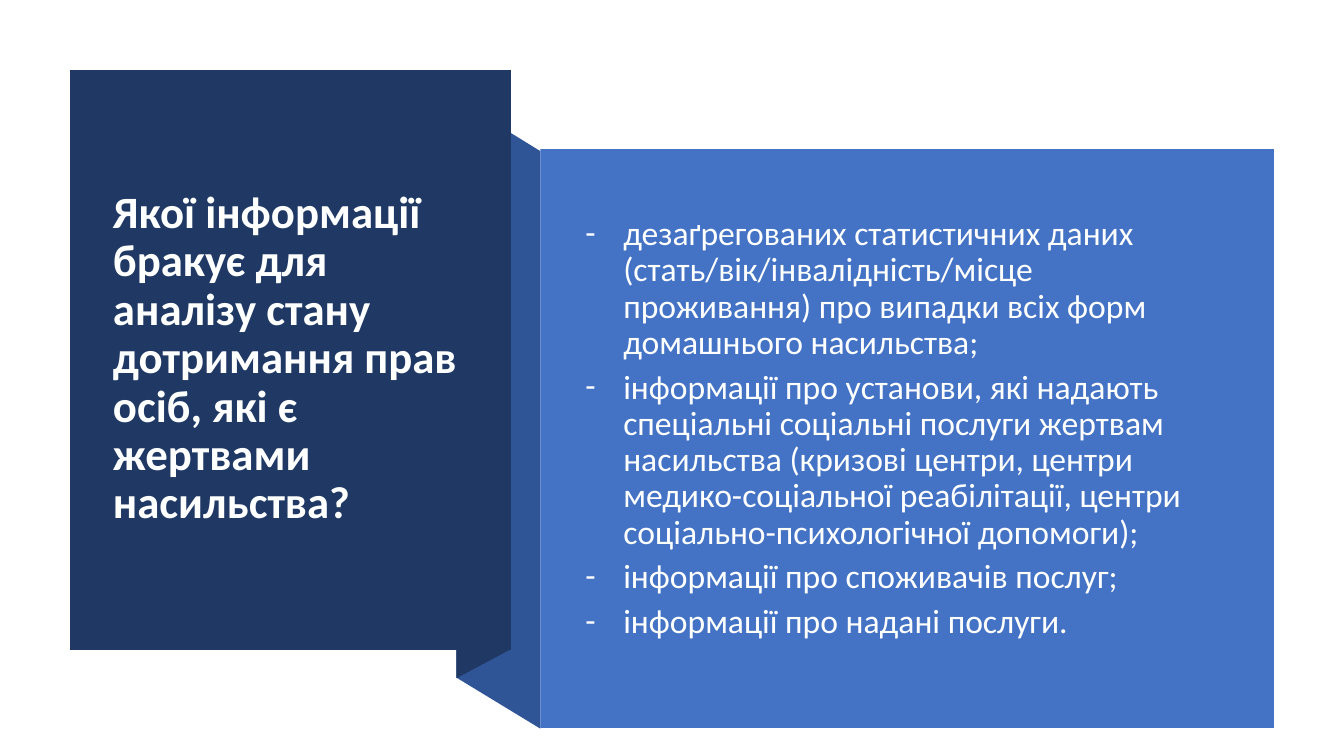
"""Build a slide with a folded dark title panel and a dashed list on a blue panel."""
from dataclasses import dataclass

from lxml import etree
from pptx import Presentation
from pptx import util as u
from pptx.dml.color import RGBColor
from pptx.enum import text
from pptx.enum import shapes
from pptx.oxml.ns import qn


@dataclass(frozen=True)
class Theme:
    font: str = "Calibri"
    ink: str = "FEFFFF"
    navy: str = "203864"
    spine: str = "2F5597"
    panel: str = "4472C4"
    title_size: float = 32
    list_size: float = 24
    line_spacing: float = 0.9
    list_gap: float = 6
    list_indent: float = 27


class SlideBuilder:
    def __init__(self, slide, theme):
        self.slide = slide
        self.theme = theme

    def paint(self, shape, color):
        shape.shadow.inherit = False
        shape.fill.solid()
        shape.fill.fore_color.rgb = RGBColor.from_string(color)
        shape.line.fill.background()

    def outline(self, points, color):
        start, *rest = [(u.Pt(x), u.Pt(y)) for x, y in points]
        builder = self.slide.shapes.build_freeform(*start)
        builder.add_line_segments(rest, close=True)
        self.paint(builder.convert_to_shape(), color)

    def rectangle(self, box, color):
        panel = self.slide.shapes.add_shape(
            shapes.MSO_SHAPE.RECTANGLE, *map(u.Pt, box))
        self.paint(panel, color)

    def place(self, placeholder, box):
        placeholder.left, placeholder.top, placeholder.width, placeholder.height = map(u.Pt, box)
        self.slide.shapes.element.append(placeholder.element)
        frame = placeholder.text_frame
        frame.word_wrap = True
        frame.auto_size = text.MSO_AUTO_SIZE.NONE
        frame.vertical_anchor = text.MSO_ANCHOR.MIDDLE
        return frame

    def style(self, paragraph, size, bold=False):
        paragraph.alignment = text.PP_ALIGN.LEFT
        font = paragraph.font
        font.name = self.theme.font
        font.size = u.Pt(size)
        font.bold = bold
        font.color.rgb = RGBColor.from_string(self.theme.ink)

    def title(self, box, wording):
        frame = self.place(self.slide.shapes.title, box)
        frame.text = wording
        heading = frame.paragraphs[0]
        heading.line_spacing = self.theme.line_spacing
        self.style(heading, self.theme.title_size, bold=True)

    def dash(self, paragraph):
        properties = paragraph._p.get_or_add_pPr()
        indent = u.Pt(self.theme.list_indent)
        properties.set("marL", str(indent))
        properties.set("indent", str(-indent))
        etree.SubElement(properties, qn("a:buFont"), typeface=self.theme.font)
        etree.SubElement(properties, qn("a:buChar"), char="-")

    def dashed_list(self, box, items):
        frame = self.place(self.slide.placeholders[1], box)
        frame.text = "\n".join(items)
        for item in frame.paragraphs:
            item.line_spacing = self.theme.line_spacing
            item.space_before = u.Pt(0)
            item.space_after = u.Pt(self.theme.list_gap)
            self.dash(item)
            self.style(item, self.theme.list_size)


QUESTION = ("Якої інформації бракує для аналізу стану дотримання прав осіб, "
            "які є жертвами насильства?")
MISSING_DATA = [
    "дезаґрегованих статистичних даних (стать/вік/інвалідність/місце проживання) "
    "про випадки всіх форм домашнього насильства;",
    "інформації про установи, які надають спеціальні соціальні послуги жертвам "
    "насильства (кризові центри, центри медико-соціальної реабілітації, "
    "центри соціально-психологічної допомоги);",
    "інформації про споживачів послуг;",
    "інформації про надані послуги.",
]


def main():
    deck = Presentation()
    deck.slide_width, deck.slide_height = u.Pt(960), u.Pt(540)
    theme = Theme()
    builder = SlideBuilder(deck.slides.add_slide(deck.slide_layouts[1]), theme)

    builder.outline([(386, 520.5), (326, 484), (326, 71), (386, 108)], theme.spine)
    builder.outline([(364.5, 464), (326, 484.5), (326, 70.5), (364.5, 50)], theme.navy)
    builder.outline([(50, 50), (365, 50), (365, 464), (50, 464)], theme.navy)
    builder.title((73.5, 77, 267, 359), QUESTION)
    builder.rectangle((386, 106.5, 524, 413.5), theme.panel)
    builder.dashed_list((411, 135.5, 469, 341.5), MISSING_DATA)

    deck.save("out.pptx")


if __name__ == "__main__":
    main()
